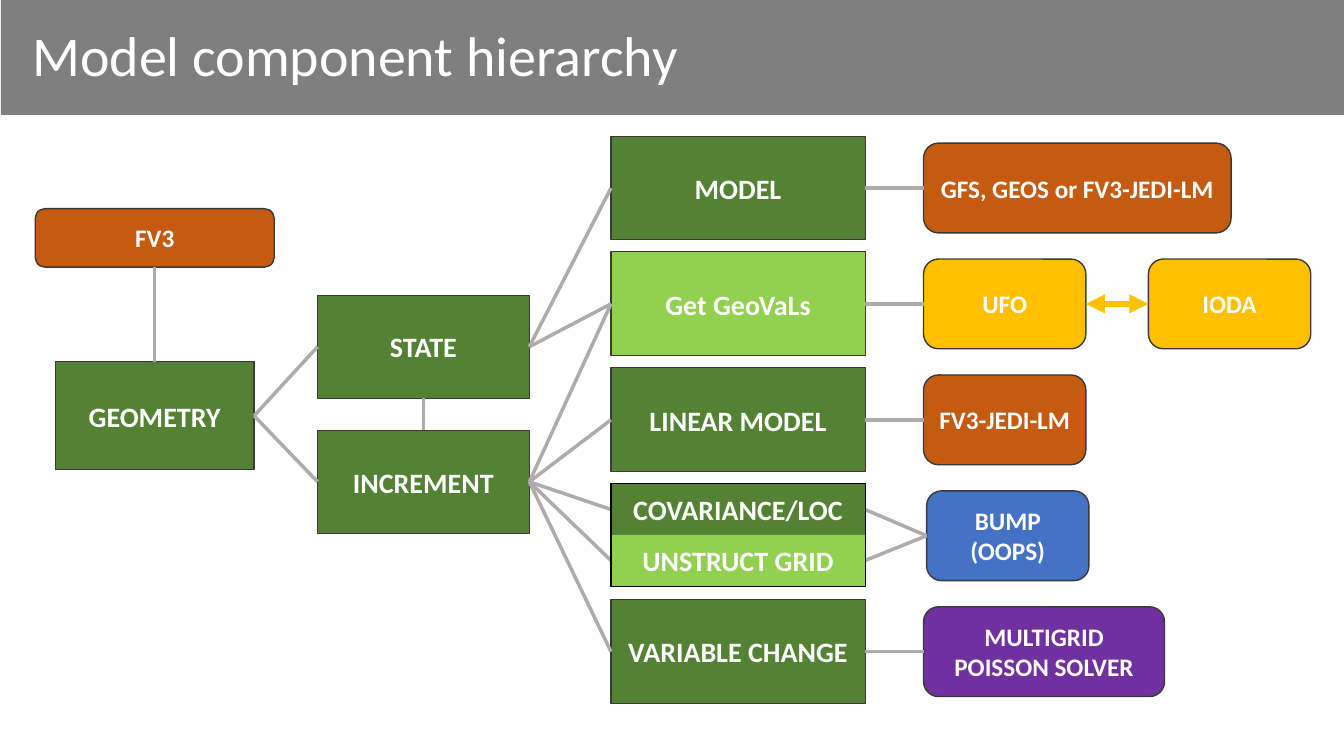
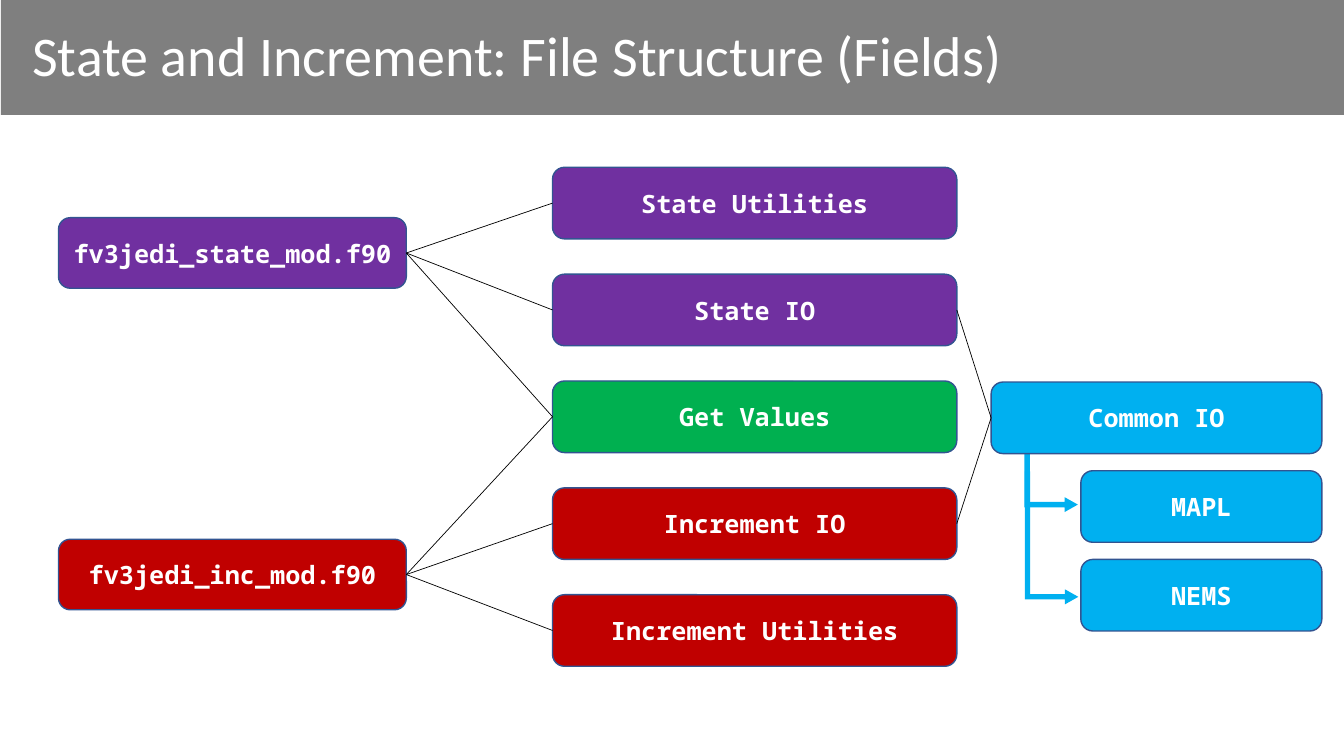
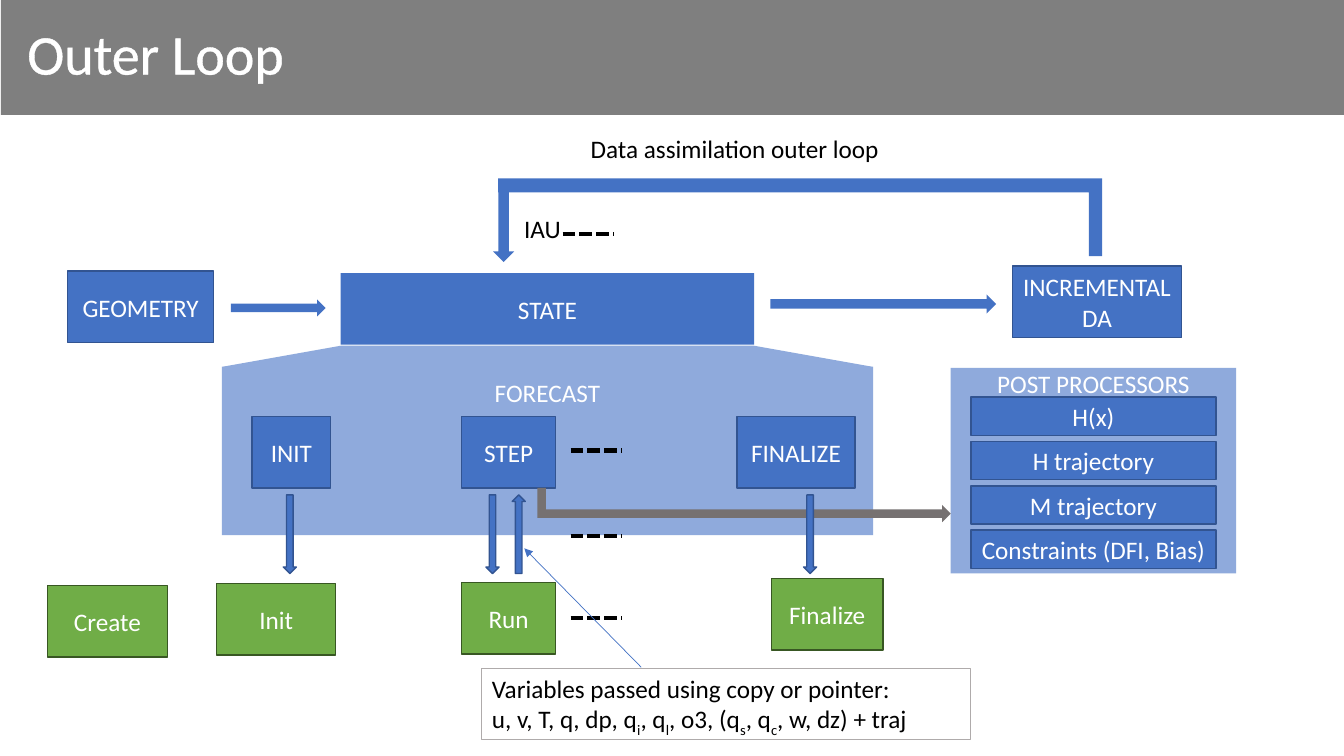
from lxml import etree
from pptx import Presentation
from pptx.dml.color import RGBColor
from pptx.enum.dml import MSO_LINE
from pptx.enum.shapes import MSO_CONNECTOR, MSO_SHAPE
from pptx.enum.text import MSO_ANCHOR, PP_ALIGN
from pptx.oxml import parse_xml
from pptx.oxml.ns import nsdecls, qn
from pptx.util import Inches, Pt

RECT, ROUND = MSO_SHAPE.RECTANGLE, MSO_SHAPE.ROUNDED_RECTANGLE
RIGHT, DOWN, UP = MSO_SHAPE.RIGHT_ARROW, MSO_SHAPE.DOWN_ARROW, MSO_SHAPE.UP_ARROW
BENT, CORNER, TRAP = MSO_SHAPE.BENT_UP_ARROW, MSO_SHAPE.CORNER, MSO_SHAPE.TRAPEZOID
STRAIGHT, DOTS = MSO_CONNECTOR.STRAIGHT, MSO_LINE.SQUARE_DOT
MIDDLE, TOP = MSO_ANCHOR.MIDDLE, MSO_ANCHOR.TOP
CENTER, LEFT = PP_ALIGN.CENTER, PP_ALIGN.LEFT
SIDES = {"top": 0, "left": 1, "bottom": 2, "right": 3}

COLORS = {
    "black": "000000", "white": "FFFFFF", "moss": "548235", "lime": "92D050",
    "rust": "C55A11", "gold": "FFC000", "blue": "4472C4", "plum": "7030A0",
    "coal": "3B3838", "ash": "AFABAB", "navy": "325491", "green": "00B050",
    "red": "C00000", "sky": "00B0F0", "pale": "8FAADC", "leaf": "70AD47",
    "pine": "385723", "stone": "767171",
}

HEAD = {"name": "Calibri", "size": Pt(40)}
CORE = {"name": "Calibri", "size": Pt(20), "bold": True}
PART = {"name": "Calibri", "size": Pt(18), "bold": True}
CODE = {"name": "Noto Sans Mono", "size": Pt(18), "bold": True}
BODY = {"name": "Calibri", "size": Pt(18)}

BAND = (0.01, -0.02, 13.37, 1.16)
TITLE = (0.22, 0.12, 10.66, 0.91)

ROW, STEP = 1.35, 1.15
MODELS = [
    ("MODEL", 0, 1.03, "moss", "coal"),
    ("Get GeoVaLs", 1, 1.03, "lime", "coal"),
    ("LINEAR MODEL", 2, 1.03, "moss", "coal"),
    ("COVARIANCE/LOC", 3, 0.51, "moss", None),
    ("UNSTRUCT GRID", 3.44, 0.51, "lime", None),
    ("VARIABLE CHANGE", 4, 1.03, "moss", "coal"),
]
STAGES = [
    ("GEOMETRY", (0.55, 3.59, 1.97, 1.07)),
    ("STATE", (3.15, 2.93, 2.1, 1.02)),
    ("INCREMENT", (3.15, 4.27, 2.1, 1.02)),
]
PARTNERS = [
    ("GFS, GEOS or FV3-JEDI-LM", 0, 9.16, 3.05, "rust"),
    ("UFO", 1, 9.16, 1.61, "gold"),
    ("IODA", 1, 11.39, 1.61, "gold"),
    ("FV3-JEDI-LM", 2, 9.16, 1.61, "rust"),
    ("BUMP (OOPS)", 3, 9.19, 1.61, "blue"),
    ("MULTIGRID POISSON SOLVER", 4, 9.16, 2.39, "plum"),
]
TREE = {
    "GEOMETRY": ["STATE", "INCREMENT"],
    "STATE": ["MODEL", "Get GeoVaLs"],
    "INCREMENT": [row[0] for row in MODELS[1:]],
    "MODEL": ["GFS, GEOS or FV3-JEDI-LM"],
    "Get GeoVaLs": ["UFO"],
    "LINEAR MODEL": ["FV3-JEDI-LM"],
    "COVARIANCE/LOC": ["BUMP (OOPS)"],
    "UNSTRUCT GRID": ["BUMP (OOPS)"],
    "VARIABLE CHANGE": ["MULTIGRID POISSON SOLVER"],
}

UNITS = [
    ("State Utilities", "plum"), ("State IO", "plum"), ("Get Values", "green"),
    ("Increment IO", "red"), ("Increment Utilities", "red"),
]
FILES = [
    ("fv3jedi_state_mod.f90", (0.58, 2.16, 3.45, 0.7), "plum"),
    ("fv3jedi_inc_mod.f90", (0.58, 5.35, 3.45, 0.7), "red"),
    ("Common IO", (9.83, 3.79, 3.28, 0.71), "sky"),
    ("MAPL", (10.72, 4.67, 2.39, 0.71), "sky"),
    ("NEMS", (10.72, 5.55, 2.39, 0.71), "sky"),
]
USES = {
    "fv3jedi_state_mod.f90": ["State Utilities", "State IO", "Get Values"],
    "fv3jedi_inc_mod.f90": ["Get Values", "Increment IO", "Increment Utilities"],
    "State IO": ["Common IO"],
    "Increment IO": ["Common IO"],
}
HOOKS = [(10.13, 4.52, 0.59, 0.53), (9.77, 5.07, 1.32, 0.53)]

PANELS = [
    ("POST PROCESSORS", (9.43, 3.65, 2.83, 2.04), 0),
    ("FORECAST", (2.2, 3.64, 6.46, 1.67), 0.1),
]
TASKS = [
    ("GEOMETRY", (0.67, 2.69, 1.45, 0.71), "blue", "navy"),
    ("STATE", (3.38, 2.71, 4.1, 0.71), "blue", None),
    ("INCREMENTAL\nDA", (10.04, 2.64, 1.68, 0.71), "blue", "navy"),
    ("INIT", (2.5, 4.13, 0.78, 0.71), "blue", "navy"),
    ("STEP", (4.58, 4.13, 0.93, 0.71), "blue", "navy"),
    ("FINALIZE", (7.31, 4.13, 1.17, 0.71), "blue", "navy"),
    ("Create", (0.47, 5.81, 1.19, 0.71), "leaf", "pine"),
    ("Init", (2.15, 5.79, 1.18, 0.71), "leaf", "pine"),
    ("Run", (4.58, 5.78, 0.93, 0.71), "leaf", "pine"),
    ("Finalize", (7.65, 5.74, 1.11, 0.71), "leaf", "pine"),
]
POSTS = ["H(x)", "H trajectory", "M trajectory", "Constraints (DFI, Bias)"]
FLOWS = [
    (TRAP, (2.2, 3.43, 6.46, 0.21), "pale", 0, [5.62]),
    (RIGHT, (2.29, 2.97, 0.94, 0.17), "blue", 0, []),
    (RIGHT, (7.64, 2.92, 2.24, 0.19), "blue", 0, []),
    (DOWN, (4.89, 1.88, 0.21, 0.72), "blue", 0, []),
    (CORNER, (4.94, 1.77, 5.99, 0.77), "blue", 180, [0.18, 0.17]),
    (BENT, (7.21, 2.96, 0.34, 4.1), "stone", 90, []),
]
CALLS = [(DOWN, 2.87), (DOWN, 4.88), (UP, 5.14), (DOWN, 8.03)]
GAPS = [(5.58, 2.32), (5.66, 4.47), (5.66, 5.32), (5.66, 6.13)]
NOTES = [
    ("Data assimilation outer loop", (5.76, 1.27, 3.39, 0.4), None),
    ("IAU", (5.1, 2.07, 0.62, 0.4), None),
    ("Variables passed using copy or pointer:\n"
     "u, v, T, q, dp, q~i~, q~l~, o3, (q~s~, q~c~, w, dz) + traj",
     (4.78, 6.63, 4.85, 0.71), "ash"),
]


def rgb(name):
    return RGBColor.from_string(COLORS[name])


def place(shape, at):
    for key, val in zip(("left", "top", "width", "height"), at):
        setattr(shape, key, Inches(val))


def paint(shape, fill=None, edge=None, width=1):
    if fill:
        shape.fill.solid()
        shape.fill.fore_color.rgb = rgb(fill)
    else:
        shape.fill.background()
    if edge:
        shape.line.color.rgb = rgb(edge)
        shape.line.width = Pt(width)
    else:
        shape.line.fill.background()


def write(shape, text, form, color="white", align=CENTER, anchor=MIDDLE):
    frame = shape.text_frame
    frame.word_wrap = True
    frame.vertical_anchor = anchor
    for num, line in enumerate(text.split("\n")):
        para = frame.add_paragraph() if num else frame.paragraphs[0]
        para.alignment = align
        for pos, piece in enumerate(line.split("~")):
            run = para.add_run()
            run.text = piece
            for key, val in form.items():
                setattr(run.font, key, val)
            run.font.color.rgb = rgb(color)
            if pos % 2:
                run._r.get_or_add_rPr().set("baseline", "-25000")


def draw(slide, kind, at, fill=None, edge=None, width=1, turn=0, bends=()):
    shape = slide.shapes.add_shape(kind, *map(Inches, at))
    shape.shadow.inherit = False
    shape.rotation = turn
    for num, bend in enumerate(bends):
        shape.adjustments[num] = bend
    paint(shape, fill, edge, width)
    return shape


def box(slide, kind, text, at, form, fill, edge=None, width=1):
    shape = draw(slide, kind, at, fill, edge, width)
    write(shape, text, form)
    return shape


def link(slide, ends, color, width, dash=None, tips=()):
    line = slide.shapes.add_connector(STRAIGHT, *map(Inches, ends))
    line.line.color.rgb = rgb(color)
    line.line.width = Pt(width)
    if dash:
        line.line.dash_style = dash
    props = line.element.spPr
    for tip in tips:
        etree.SubElement(props.find(qn("a:ln")), qn(tip), type="triangle")
    etree.SubElement(props, qn("a:effectLst"))
    return line


def join(slide, first, last, color, width, sides=("right", "left"), tips=()):
    line = link(slide, (0, 0, 1, 1), color, width, tips=tips)
    line.begin_connect(first, SIDES[sides[0]])
    line.end_connect(last, SIDES[sides[1]])


def fan(slide, boxes, tree, color, width):
    for root, kids in tree.items():
        for kid in kids:
            join(slide, boxes[root], boxes[kid], color, width)


def start(deck, text, at=TITLE):
    slide = deck.slides.add_slide(deck.slide_layouts[5])
    place(slide.shapes.title, at)
    write(slide.shapes.title, text, HEAD, align=LEFT)
    slide.shapes.title.text_frame.paragraphs[0].line_spacing = 0.9
    return slide


def add_band(slide):
    band = draw(slide, RECT, BAND, "black")
    tint = band.element.spPr.find(qn("a:solidFill"))[0]
    etree.SubElement(tint, qn("a:alpha"), val="50000")
    slide.slide_layout.shapes.element.insert(2, band.element)


def add_models(deck):
    slide = start(deck, "Model component hierarchy")
    add_band(slide)
    boxes = {}
    for text, at in STAGES:
        boxes[text] = box(slide, RECT, text, at, CORE, "moss", "coal", 0.75)
    for text, row, high, fill, edge in MODELS:
        at = (6.06, ROW + STEP * row, 2.52, high)
        boxes[text] = box(slide, RECT, text, at, CORE, fill, edge, 0.75)
    for text, row, left, wide, fill in PARTNERS:
        at = (left, ROW + STEP * row + 0.07, wide, 0.89)
        boxes[text] = box(slide, ROUND, text, at, PART, fill, "coal")
    grid = box(slide, ROUND, "FV3", (0.35, 2.07, 2.37, 0.58), PART, "rust", "coal")
    fan(slide, boxes, TREE, "ash", 2.5)
    join(slide, boxes["GEOMETRY"], grid, "ash", 2.5, ("top", "bottom"))
    join(slide, boxes["INCREMENT"], boxes["STATE"], "ash", 2.5, ("top", "bottom"))
    join(slide, boxes["UFO"], boxes["IODA"], "gold", 4.5,
         tips=("a:headEnd", "a:tailEnd"))
    draw(slide, RECT, (6.06, ROW + STEP * 3, 2.52, 1.02), None, "black", 0.75)


def add_files(deck):
    slide = start(deck, "State and Increment: File Structure (Fields)")
    for at in HOOKS:
        draw(slide, BENT, at, "sky", turn=90, bends=(0.1, 0.14, 0.25))
    units = [(text, (5.48, 1.66 + 1.06 * num, 4.01, 0.71), fill)
             for num, (text, fill) in enumerate(UNITS)]
    boxes = {text: box(slide, ROUND, text, at, CODE, fill, "navy")
             for text, at, fill in FILES + units}
    fan(slide, boxes, USES, "black", 0.5)


def add_loop(deck):
    slide = start(deck, "Outer Loop", (0.17, 0.06, 11.63, 1))
    run = slide.shapes.title.text_frame.paragraphs[0].runs[0]
    run._r.get_or_add_rPr().insert(0, parse_xml(
        f'<a:ln {nsdecls("a")} w="18415"><a:solidFill>'
        f'<a:srgbClr val="{COLORS["white"]}"/></a:solidFill></a:ln>'))
    for text, at, gap in PANELS:
        panel = draw(slide, RECT, at, "pale")
        panel.text_frame.margin_top = Inches(gap)
        write(panel, text, BODY, anchor=TOP)
    posts = [(text, (9.63, 3.94 + 0.44 * num, 2.43, 0.38), "blue", "navy")
             for num, text in enumerate(POSTS)]
    for text, at, fill, edge in TASKS + posts:
        box(slide, RECT, text, at, BODY, fill, edge)
    for kind, at, fill, turn, bends in FLOWS:
        draw(slide, kind, at, fill, turn=turn, bends=bends)
    for kind, mid in CALLS:
        draw(slide, kind, (mid - 0.06, 4.91, 0.13, 0.78), "blue", "navy")
    for left, top in GAPS:
        link(slide, (left, top, left + 0.51, top), "black", 3, DOTS)
    for text, at, edge in NOTES:
        note = slide.shapes.add_textbox(*map(Inches, at))
        paint(note, None, edge, 0.75)
        write(note, text, BODY, "black", LEFT, TOP)
    link(slide, (6.36, 6.62, 5.2, 5.44), "blue", 0.5, tips=("a:tailEnd",))


def main():
    deck = Presentation()
    deck.slide_width, deck.slide_height = Inches(13.33), Inches(7.5)
    add_models(deck)
    add_files(deck)
    add_loop(deck)
    deck.save("out.pptx")


if __name__ == "__main__":
    main()
